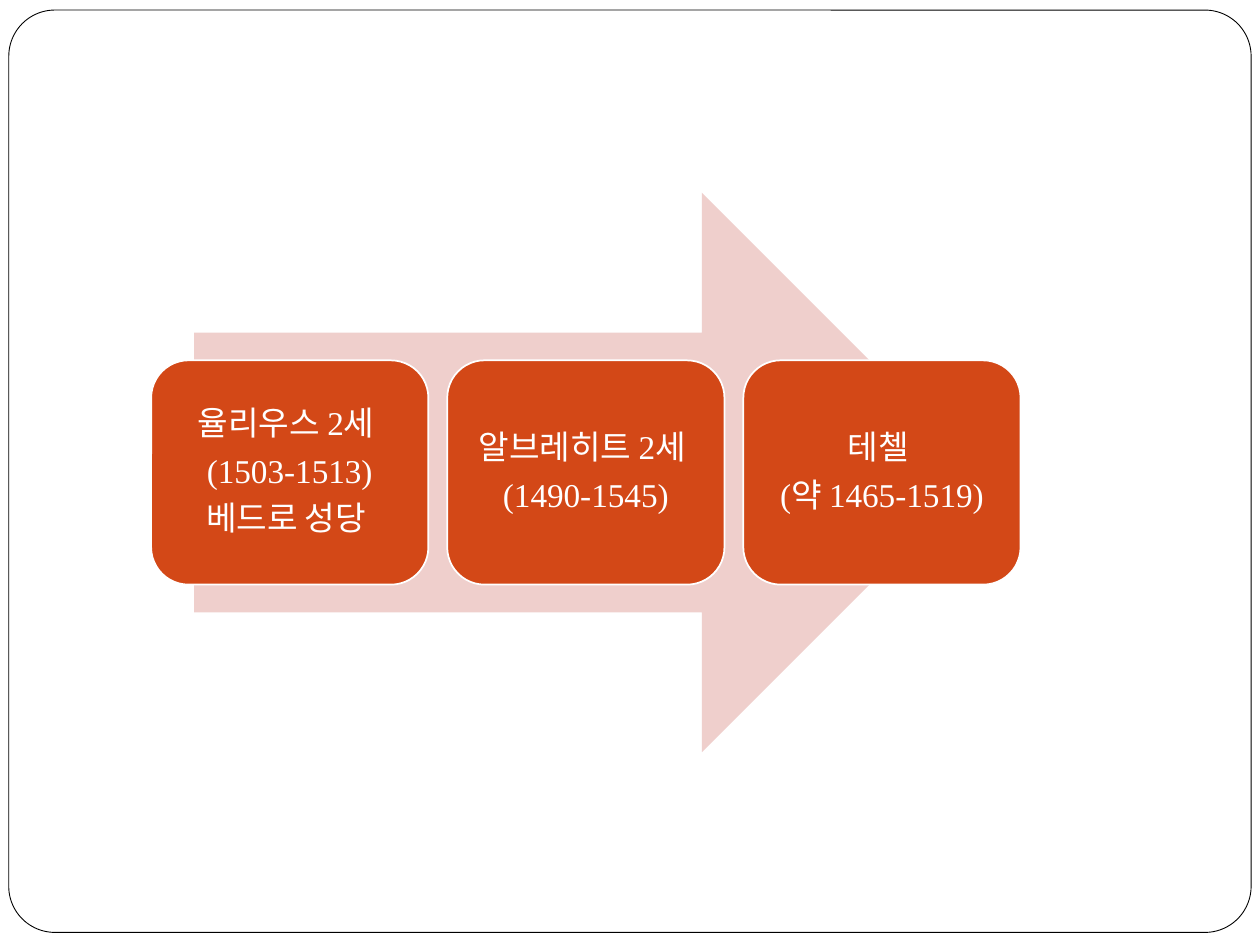
from dataclasses import dataclass

from pptx import Presentation
from pptx.dml.color import RGBColor
from pptx.enum.shapes import MSO_SHAPE
from pptx.enum.text import MSO_ANCHOR, PP_ALIGN
from pptx.util import Inches, Pt

ROUNDED = MSO_SHAPE.ROUNDED_RECTANGLE
ARROW = MSO_SHAPE.RIGHT_ARROW
MIDDLE = MSO_ANCHOR.MIDDLE
CENTER = PP_ALIGN.CENTER

COLORS = {"paper": "FFFFFF", "frame": "000000", "arrow": "EFCFCC", "card": "D34817"}
FONT, FONT_SIZE = "Times New Roman", 19
SPACE_AFTER = 0.35 * FONT_SIZE
INSET = Inches(0.08)

# Card row, in inches
ROW_LEFT, ROW_TOP = 1.2, 2.86
CARD_WIDTH, CARD_HEIGHT, CARD_GAP = 2.2, 1.78, 0.15


@dataclass(frozen=True)
class Box:
    left: float
    top: float
    width: float
    height: float


@dataclass(frozen=True)
class Card:
    column: int
    lines: tuple[str, ...]

    @property
    def box(self) -> Box:
        left = ROW_LEFT + self.column * (CARD_WIDTH + CARD_GAP)
        return Box(left, ROW_TOP, CARD_WIDTH, CARD_HEIGHT)


CARDS = (
    Card(0, ("율리우스 2세 ", "(1503-1513)", "베드로 성당 ")),
    Card(1, ("알브레히트 2세 ", "(1490-1545)")),
    Card(2, ("테첼 ", "(약 1465-1519)")),
)


def color(name: str) -> RGBColor:
    return RGBColor.from_string(COLORS[name])


def draw_shape(slide, kind, box: Box, fill: str, line: str = "", line_width: float = 0):
    """Add a flat filled shape, outlined only when a line colour is named."""
    shape = slide.shapes.add_shape(
        kind, Inches(box.left), Inches(box.top), Inches(box.width), Inches(box.height)
    )
    shape.shadow.inherit = False
    shape.fill.solid()
    shape.fill.fore_color.rgb = color(fill)
    if line:
        shape.line.color.rgb = color(line)
        shape.line.width = Pt(line_width)
    else:
        shape.line.fill.background()
    return shape


def draw_card(slide, card: Card) -> None:
    shape = draw_shape(slide, ROUNDED, card.box, "card", "paper", 1)
    text_frame = shape.text_frame
    text_frame.word_wrap = True
    text_frame.vertical_anchor = MIDDLE
    text_frame.margin_left = text_frame.margin_right = INSET
    text_frame.margin_top = text_frame.margin_bottom = INSET
    text_frame.text = "\n".join(card.lines)
    for paragraph in text_frame.paragraphs:
        paragraph.alignment = CENTER
        paragraph.line_spacing = 0.9
        paragraph.space_after = Pt(SPACE_AFTER)
        for run in paragraph.runs:
            run.font.name = FONT
            run.font.size = Pt(FONT_SIZE)
            run.font.color.rgb = color("paper")


def main() -> None:
    presentation = Presentation()
    presentation.slide_width, presentation.slide_height = Inches(10), Inches(7.5)
    slide = presentation.slides.add_slide(presentation.slide_layouts[6])

    # Page frame
    frame = draw_shape(slide, ROUNDED, Box(0.07, 0.08, 9.86, 7.32), "paper", "frame", 0.5)
    frame.adjustments[0] = 0.05

    # Process arrow with its steps
    draw_shape(slide, ARROW, Box(1.54, 1.53, 6.25, 4.44), "arrow")
    for card in CARDS:
        draw_card(slide, card)

    presentation.save("out.pptx")


if __name__ == "__main__":
    main()
